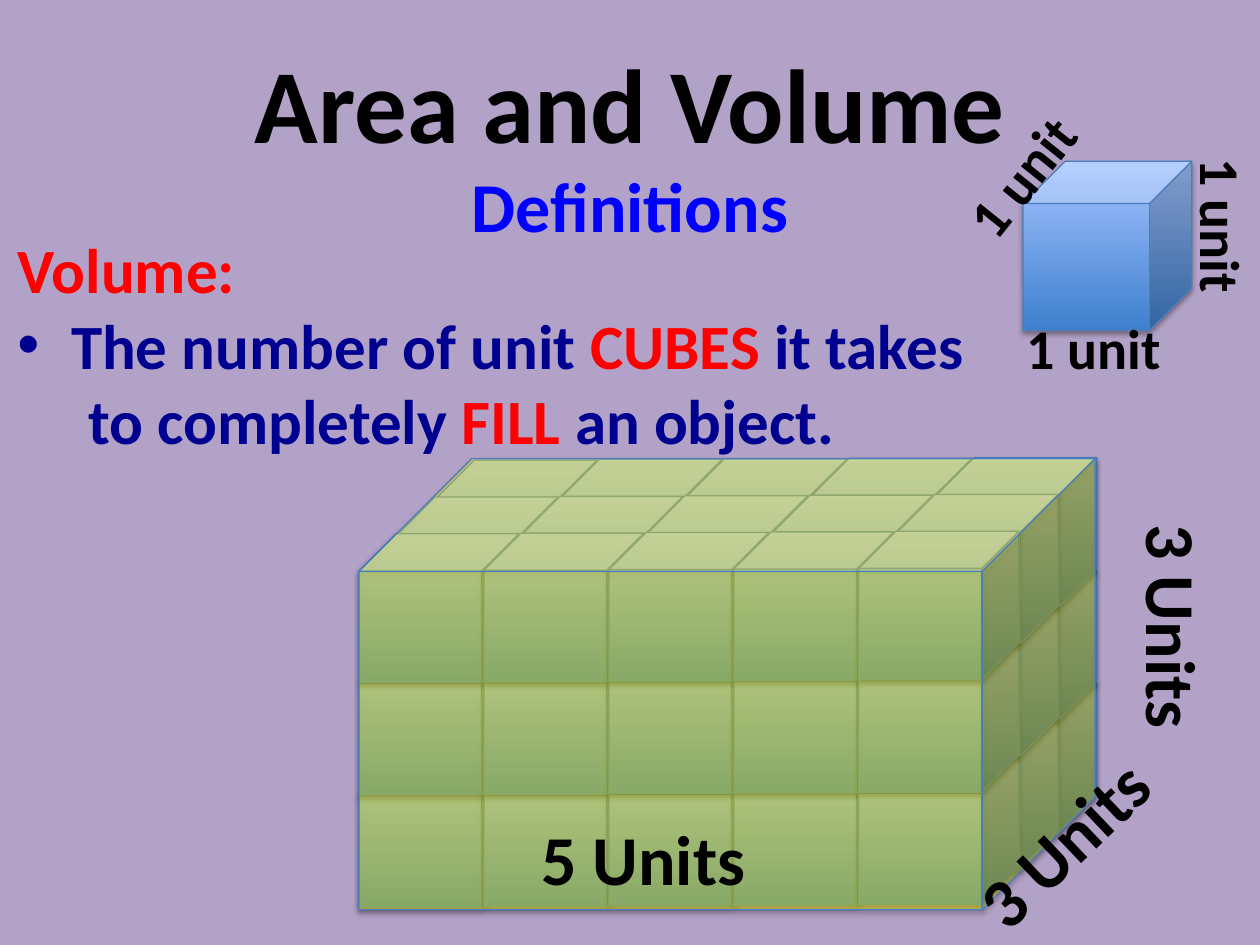
from lxml import etree
from pptx import Presentation
from pptx import util as u
from pptx.dml.color import RGBColor
from pptx.enum import shapes, text
from pptx.oxml.ns import qn

color = RGBColor.from_string
BLACK, BLUE, NAVY, RED = "000000", "0000FF", "000090", "FF0000"

deck = Presentation()
deck.slide_width, deck.slide_height = u.Pt(720), u.Pt(540)
page = deck.slides.add_slide(deck.slide_layouts[6])
page.background.fill.solid()
page.background.fill.fore_color.rgb = color("B3A2C7")


def add_cube(left, top, width, height):
    """Add an outlined cube with a soft shadow and a blue gradient."""
    cube = page.shapes.add_shape(
        shapes.MSO_SHAPE.CUBE, u.Pt(left), u.Pt(top), u.Pt(width), u.Pt(height))
    cube.fill.gradient()
    cube.fill.gradient_angle = 90
    for stop, shade in zip(cube.fill.gradient_stops, ("3F80CE", "A4C4FF")):
        stop.color.rgb = color(shade)
    cube.line.color.rgb = color("4B7EBC")
    cube.line.width = u.Pt(0.75)
    cube.shadow.inherit = False
    effects = cube._element.spPr.find(qn("a:effectLst"))
    shadow = etree.SubElement(
        effects, qn("a:outerShdw"), blurRad=str(u.Pt(3.1)), dist=str(u.Pt(1.8)),
        dir="5400000", rotWithShape="0")
    tint = etree.SubElement(shadow, qn("a:srgbClr"), val=BLACK)
    etree.SubElement(tint, qn("a:alpha"), val="35000")
    return cube


def add_text(left, top, width, height, size, paragraphs, align="LEFT",
             rotation=0, **frame_format):
    """Add bold text; each paragraph is a list of (words, colour) spans."""
    box = page.shapes.add_textbox(u.Pt(left), u.Pt(top), u.Pt(width), u.Pt(height))
    box.rotation = rotation
    for name, value in {"word_wrap": True, **frame_format}.items():
        setattr(box.text_frame, name, value)
    for index, spans in enumerate(paragraphs):
        para = box.text_frame.paragraphs[0] if index == 0 else box.text_frame.add_paragraph()
        para.alignment = text.PP_ALIGN[align]
        for words, shade in spans:
            span = para.add_run()
            span.text = words
            for name, value in {"name": "Calibri", "size": u.Pt(size), "bold": True}.items():
                setattr(span.font, name, value)
            span.font.color.rgb = color(shade)
    return box


# Block of unit cubes: 5 columns, 3 layers from the bottom, 3 deep from the back
for column in range(5):
    for layer in range(3):
        for depth in (2, 1, 0):
            add_cube(205.2 + 71.4 * column + 22.3 * depth,
                     433.4 - 0.36 * column - 64.2 * layer - 21 * depth, 91.4, 85)

# Translucent yellow cube over the whole block
cover = add_cube(205.2, 262.1, 420.5, 257.8)
cover.fill.solid()
cover.fill.fore_color.rgb = color("FFFF00")
cover_tint = cover._element.spPr.find(qn("a:solidFill"))[0]
etree.SubElement(cover_tint, qn("a:alpha"), val="41000")

# Headings
add_text(54, 0, 612, 116, 60, [[("Area and Volume", BLACK)]], "CENTER",
         vertical_anchor=text.MSO_ANCHOR.MIDDLE)
add_text(108, 89.3, 504, 138, 40, [[("Definitions", BLUE)]], "CENTER")

# Definition, with a bullet on its second line
definition = add_text(2.9, 128.2, 647, 138, 36, [
    [("Volume:", RED)],
    [(" The number of unit ", NAVY), ("CUBES", RED), (" it takes", NAVY)],
    [("to completely ", NAVY), ("FILL", RED), (" an object.", NAVY)],
])
bulleted, continued = (
    para._p.get_or_add_pPr() for para in definition.text_frame.paragraphs[1:])
bulleted.set("marL", str(u.Pt(22.5)))
bulleted.set("indent", str(u.Pt(-22.5)))
etree.SubElement(bulleted, qn("a:buFont"), typeface="Arial")
etree.SubElement(bulleted, qn("a:buChar"), char="•")
continued.set("marL", str(u.Pt(40.5)))

# Single unit cube and its edge labels
add_cube(584.6, 92.2, 96.5, 96.5)
for left, top, rotation in ((579.6, 175.7, 0), (652.3, 106.6, 90), (537.8, 77, 308.7)):
    add_text(left, top, 92.2, 46, 32, [[("1 unit", BLACK)]],
             rotation=rotation, word_wrap=False)

# Edge labels of the block
for words, left, top, rotation in (("5 Units", 302.4, 462.2, 0),
                                   ("3 Units", 548.6, 447.8, 316.3),
                                   ("3 Units", 590.4, 323.3, 90)):
    add_text(left, top, 139, 77.8, 40, [[(words, BLACK)]], rotation=rotation)

deck.save("out.pptx")
